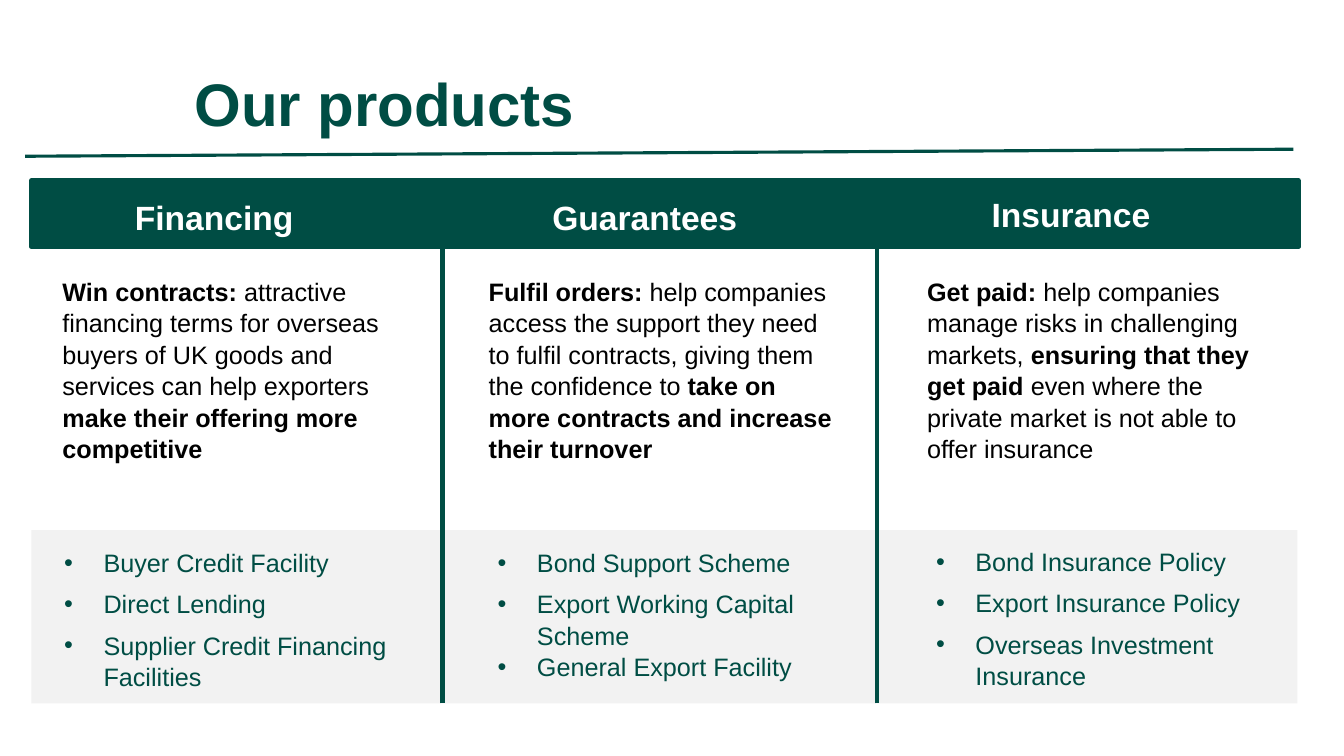
from dataclasses import dataclass

from lxml.etree import SubElement
from pptx import Presentation
from pptx.dml.color import RGBColor
from pptx.enum.shapes import MSO_CONNECTOR, MSO_SHAPE
from pptx.enum.text import MSO_ANCHOR
from pptx.oxml.ns import qn
from pptx.util import Pt


@dataclass(frozen=True)
class Theme:
    font: str = "Arial"
    green: str = "004D44"
    grey: str = "F2F2F2"
    black: str = "000000"
    white: str = "FFFFFF"
    title: float = 42.9
    heading: float = 24
    body: float = 18
    spacing: float = 1.04


@dataclass(frozen=True)
class Product:
    """Heading box is (left, top, width); asterisks in the pitch enclose bold words."""
    heading: str
    heading_box: tuple
    pitch: str
    pitch_left: float
    schemes: list
    schemes_at: tuple
    gaps: tuple = (0, 7, 7)


PRODUCTS = [
    Product(
        "Financing", (89.3, 136.1, 169.2),
        "*Win contracts:* attractive financing terms for overseas buyers of UK goods "
        "and services can help exporters *make their offering more competitive*", 31.7,
        ["Buyer Credit Facility", "Direct Lending", "Supplier Credit Financing Facilities"],
        (33.1, 386.6)),
    Product(
        "Guarantees", (387.4, 136.1, 192.2),
        "*Fulfil orders: *help companies access the support they need to fulfil contracts, "
        "giving them the confidence to *take on more contracts and increase their turnover*",
        336.2,
        ["Bond Support Scheme", "Export Working Capital Scheme", "General Export Facility"],
        (342.7, 386.6), (0, 7, 0)),
    Product(
        "Insurance", (701.3, 133.9, 182.9),
        "*Get paid: *help companies manage risks in challenging markets, "
        "*ensuring that they get paid *even where the private market is not able "
        "to offer insurance", 649.4,
        ["Bond Insurance Policy", "Export Insurance Policy", "Overseas Investment Insurance"],
        (655.9, 385.9)),
]


class SlideBuilder:
    def __init__(self, slide, theme):
        self.slide = slide
        self.theme = theme

    def rectangle(self, left, top, width, height, fill, outline=None):
        rect = self.slide.shapes.add_shape(
            MSO_SHAPE.RECTANGLE, Pt(left), Pt(top), Pt(width), Pt(height))
        rect.shadow.inherit = False
        rect.fill.solid()
        rect.fill.fore_color.rgb = RGBColor.from_string(fill)
        if outline:
            rect.line.color.rgb = RGBColor.from_string(outline)
            rect.line.width = Pt(3)
        else:
            rect.line.fill.background()

    def rule(self, x1, y1, x2, y2, weight):
        line = self.slide.shapes.add_connector(
            MSO_CONNECTOR.STRAIGHT, Pt(x1), Pt(y1), Pt(x2), Pt(y2))
        line.line.color.rgb = RGBColor.from_string(self.theme.green)
        line.line.width = Pt(weight)
        SubElement(line._element.spPr, qn("a:effectLst"))

    def text(self, paragraphs, left, top, width, height, *, size, color, bold=False,
             spacing=None, anchor=MSO_ANCHOR.TOP, margin=0, hanging=0, gaps=None):
        """Write paragraphs; asterisks enclose bold words, hanging adds bullets."""
        frame = self.slide.shapes.add_textbox(
            Pt(left), Pt(top), Pt(width), Pt(height)).text_frame
        frame.word_wrap = True
        frame.vertical_anchor = anchor
        for index, words in enumerate(paragraphs):
            paragraph = frame.add_paragraph() if index else frame.paragraphs[0]
            properties = paragraph._p.get_or_add_pPr()
            properties.set("marL", str(Pt(margin)))
            properties.set("indent", str(Pt(-hanging)))
            paragraph.line_spacing = spacing or self.theme.spacing
            if gaps:
                paragraph.space_before = Pt(gaps[index])
            if hanging:
                SubElement(properties, qn("a:buFont"), typeface=self.theme.font)
                SubElement(properties, qn("a:buChar"), char="•")
            for part, piece in enumerate(words.split("*")):
                if piece:
                    run = paragraph.add_run()
                    run.text = piece
                    run.font.name = self.theme.font
                    run.font.size = Pt(size)
                    run.font.bold = bold or part % 2 == 1
                    run.font.color.rgb = RGBColor.from_string(color)

    def product(self, product):
        theme = self.theme
        self.text([product.heading], *product.heading_box, 36, size=theme.heading,
                  color=theme.white, bold=True)
        self.text([product.pitch], product.pitch_left, 193, 266.4, 138,
                  size=theme.body, color=theme.black, margin=5.8)
        self.text(product.schemes, *product.schemes_at, 263.5, 108.7, size=theme.body,
                  color=theme.green, margin=33.8, hanging=28.1, gaps=product.gaps)


def main():
    presentation = Presentation()
    presentation.slide_width, presentation.slide_height = Pt(960), Pt(540)
    theme = Theme()
    builder = SlideBuilder(
        presentation.slides.add_slide(presentation.slide_layouts[6]), theme)

    builder.rectangle(22.5, 378.7, 904.3, 123.8, theme.grey)
    builder.text(["Our products"], 131.8, 24.5, 746.6, 104.4, size=theme.title,
                 color=theme.green, bold=True, spacing=0.9, anchor=MSO_ANCHOR.MIDDLE)
    builder.rule(18, 111.6, 923.8, 106.6, 2.25)
    builder.rectangle(22.5, 128.9, 905, 47.5, theme.green, outline=theme.green)
    for divider in (316.1, 626.4):
        builder.rule(divider, 502.5, divider, 176.4, 3)
    for product in PRODUCTS:
        builder.product(product)

    presentation.save("out.pptx")


if __name__ == "__main__":
    main()
